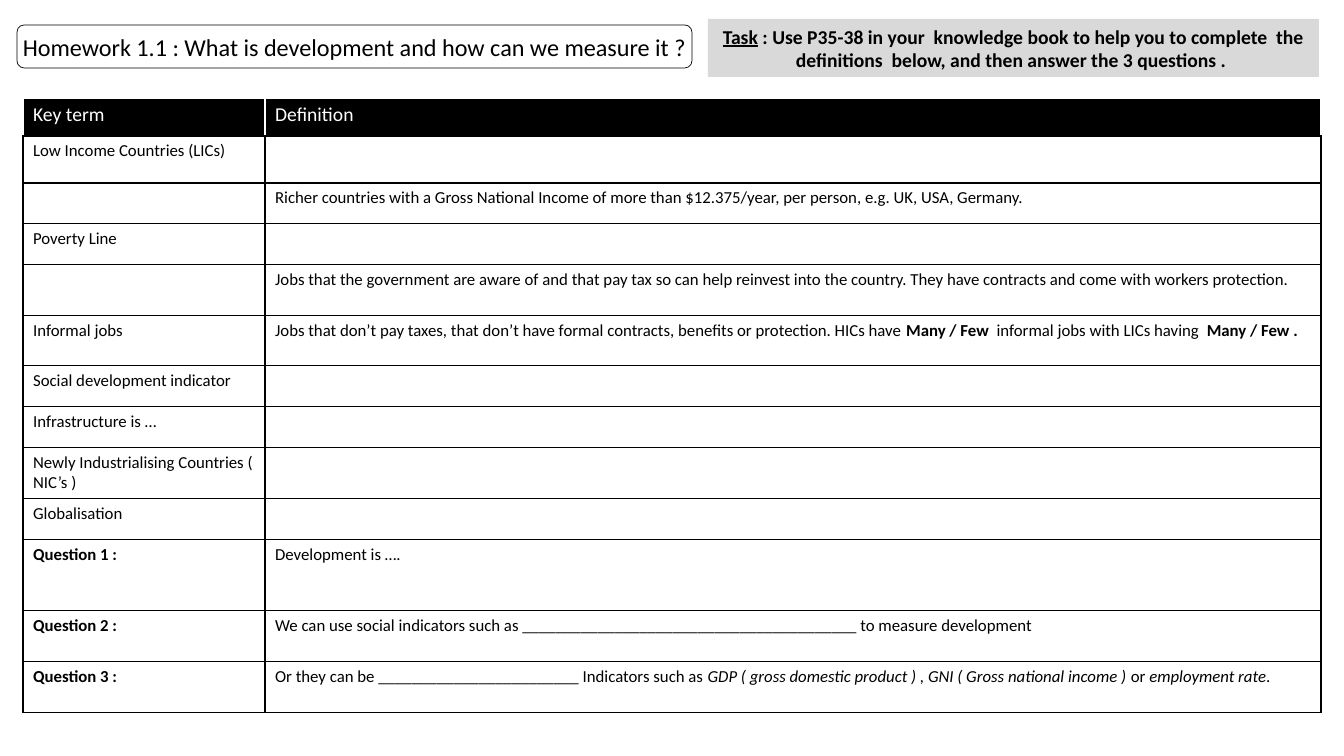
from dataclasses import dataclass

from lxml.etree import SubElement
from pptx import Presentation
from pptx.dml.color import RGBColor
from pptx.enum.shapes import MSO_SHAPE
from pptx.enum.text import MSO_ANCHOR, PP_ALIGN
from pptx.oxml.ns import qn
from pptx.util import Emu, Pt

PX_PER_INCH = 100.8
BLACK = RGBColor(0x00, 0x00, 0x00)
WHITE = RGBColor(0xFF, 0xFF, 0xFF)
GREY = RGBColor(0xD9, 0xD9, 0xD9)
FONT = "Calibri"


@dataclass(frozen=True)
class Span:
    text: str
    bold: bool = False
    italic: bool = False
    underline: bool = False


@dataclass(frozen=True)
class Row:
    height: int
    term: tuple[Span, ...] = ()
    definition: tuple[Span, ...] = ()


@dataclass(frozen=True)
class Banner:
    preset: MSO_SHAPE
    left: int
    top: int
    width: int
    height: int
    fill: RGBColor
    outlined: bool
    wraps: bool
    size: float
    spans: tuple[Span, ...]


BANNERS = (
    Banner(MSO_SHAPE.ROUNDED_RECTANGLE, 17, 25, 675, 43, WHITE, True, False, 17.3,
           (Span("Homework 1.1 : What is development and how can we measure it ?"),)),
    Banner(MSO_SHAPE.RECTANGLE, 708, 19, 611, 58, GREY, False, True, 14,
           (Span("Task", bold=True, underline=True),
            Span(" : Use P35-38 in your  knowledge book to help you to complete  the "
                 "definitions  below, and then answer the 3 questions . ", bold=True))),
)

TABLE_LEFT, TABLE_TOP = 23, 98
COLUMN_WIDTHS = (242, 1056)
ROWS = (
    Row(38, (Span("Key term"),), (Span("Definition"),)),
    Row(47, (Span("Low Income Countries (LICs)"),)),
    Row(40, definition=(Span("Richer countries with a Gross National Income of more than "
                             "$12.375/year, per person, e.g. UK, USA, Germany."),)),
    Row(40, (Span("Poverty Line"),)),
    Row(51, definition=(Span("Jobs that the government are aware of and that pay tax so can "
                             "help reinvest into the country. They have contracts and come "
                             "with workers protection."),)),
    Row(50, (Span("Informal jobs"),),
        (Span("Jobs that don’t pay taxes, that don’t have formal contracts, benefits or "
              "protection. HICs have "),
         Span("Many / Few  ", bold=True),
         Span("informal jobs with LICs having  "),
         Span("Many / Few .", bold=True))),
    Row(40, (Span("Social development indicator"),)),
    Row(40, (Span("Infrastructure is …"),)),
    Row(51, (Span("Newly Industrialising Countries ( NIC’s )"),)),
    Row(40, (Span("Globalisation"),)),
    Row(71, (Span("Question 1 :", bold=True),), (Span("Development is …."),)),
    Row(51, (Span("Question 2 :", bold=True),),
        (Span(f"We can use social indicators such as {'_' * 40} to measure development"),)),
    Row(51, (Span("Question 3 :", bold=True),),
        (Span(f"Or they can be {'_' * 24} Indicators such as "),
         Span("GDP ( gross domestic product ) , GNI ( Gross national income )", italic=True),
         Span(" or "),
         Span("employment rate", italic=True),
         Span("."))),
)


def px(length: int) -> Emu:
    return Emu(round(length * 914400 / PX_PER_INCH))


def write_spans(para, spans: tuple[Span, ...], size: float, color: RGBColor) -> None:
    for span in spans:
        run = para.add_run()
        run.text = span.text
        run.font.name = FONT
        run.font.size = Pt(size)
        run.font.color.rgb = color
        run.font.bold = span.bold
        run.font.italic = span.italic
        run.font.underline = span.underline


def add_banner(page, banner: Banner) -> None:
    box = page.shapes.add_shape(banner.preset, px(banner.left), px(banner.top),
                                px(banner.width), px(banner.height))
    box.shadow.inherit = False
    box.fill.solid()
    box.fill.fore_color.rgb = banner.fill
    if banner.outlined:
        box.line.color.rgb = BLACK
        box.line.width = Pt(0.5)
    else:
        box.line.fill.background()
    frame = box.text_frame
    frame.word_wrap = banner.wraps
    frame.vertical_anchor = MSO_ANCHOR.MIDDLE
    para = frame.paragraphs[0]
    para.alignment = PP_ALIGN.CENTER
    write_spans(para, banner.spans, banner.size, BLACK)


def set_borders(cell, sides: dict[str, RGBColor]) -> None:
    """Draw 1 pt borders; sides must run in the order L, R, T, B."""
    properties = cell._tc.get_or_add_tcPr()
    for side, color in sides.items():
        line = SubElement(properties, qn(f"a:ln{side}"), w=str(Pt(1)))
        fill = SubElement(line, qn("a:solidFill"))
        SubElement(fill, qn("a:srgbClr"), val=str(color))


def add_definitions_table(page) -> None:
    table = page.shapes.add_table(
        len(ROWS), len(COLUMN_WIDTHS), px(TABLE_LEFT), px(TABLE_TOP),
        px(sum(COLUMN_WIDTHS)), px(sum(row.height for row in ROWS))).table
    table.first_row = False
    table.horz_banding = False
    for column, width in zip(table.columns, COLUMN_WIDTHS):
        column.width = px(width)
    for row_index, row in enumerate(ROWS):
        table.rows[row_index].height = px(row.height)
        is_header = row_index == 0
        edge = WHITE if is_header else BLACK
        for column_index, spans in enumerate((row.term, row.definition)):
            cell = table.cell(row_index, column_index)
            set_borders(cell, {"L": edge, "R": edge, "T": edge, "B": BLACK})
            if is_header:
                cell.fill.solid()
                cell.fill.fore_color.rgb = BLACK
            else:
                cell.fill.background()
            write_spans(cell.text_frame.paragraphs[0], spans,
                        14 if is_header else 12, WHITE if is_header else BLACK)


def main() -> None:
    deck = Presentation()
    deck.slide_width, deck.slide_height = px(1344), px(756)
    page = deck.slides.add_slide(deck.slide_layouts[6])
    add_definitions_table(page)
    for banner in BANNERS:
        add_banner(page, banner)
    deck.save("out.pptx")


if __name__ == "__main__":
    main()
